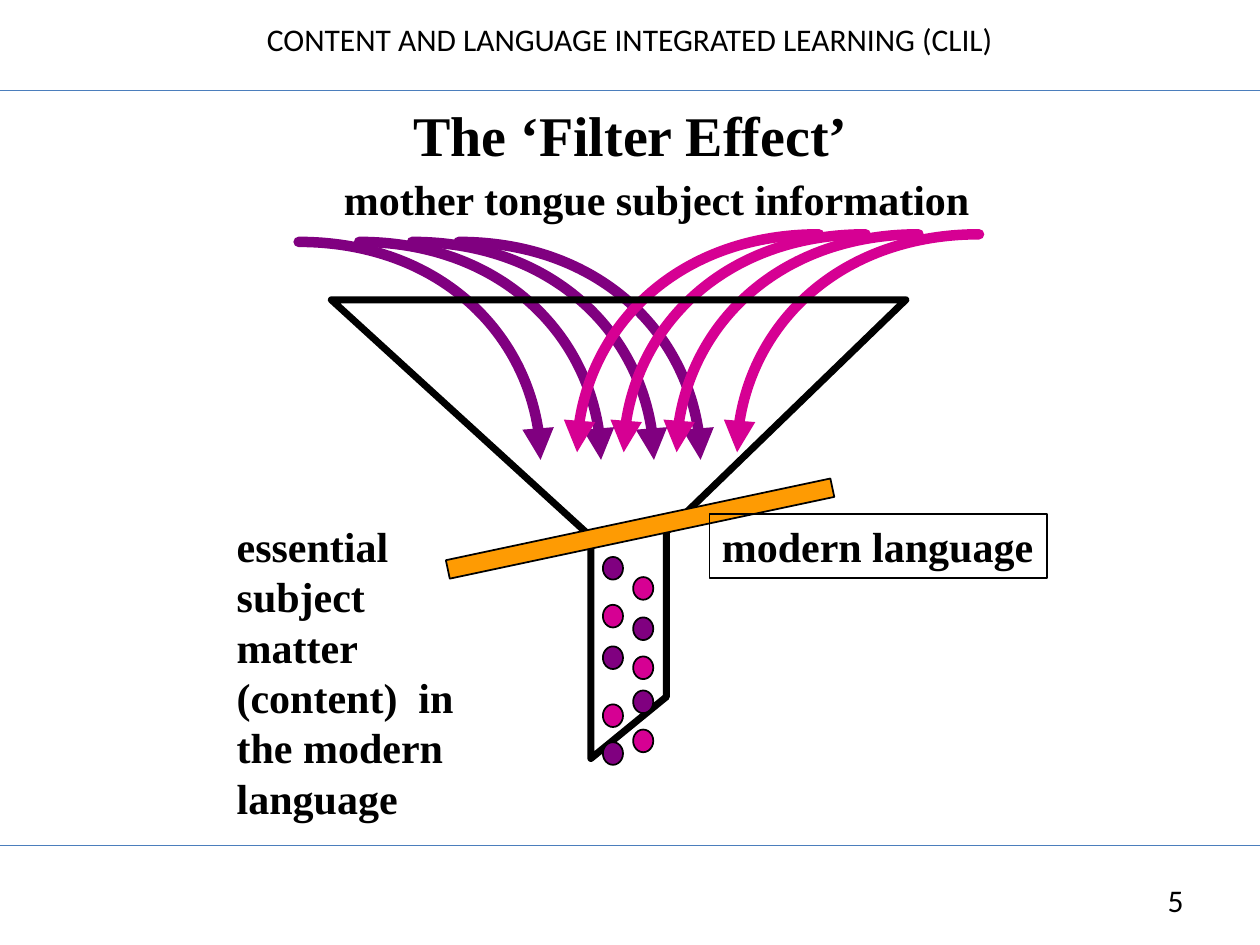
"""Build the 'Filter Effect' slide: information poured through a funnel into a modern language."""
from dataclasses import dataclass
from itertools import cycle

from lxml import etree
from pptx import Presentation
from pptx import util as u
from pptx.dml.color import RGBColor
from pptx.enum import shapes, text
from pptx.oxml.ns import qn

COLS, ROWS = 100, 75
WIDTH, HEIGHT = u.Inches(10), u.Inches(7.5)


@dataclass(frozen=True)
class Theme:
    ink: str = "000000"
    purple: str = "800080"
    pink: str = "D60093"
    bar: str = "FE9B03"
    rule: str = "4B7EBC"
    sans: str = "Calibri"
    serif: str = "Times New Roman"
    small: int = 18
    body: int = 24
    title: int = 32
    hairline: float = 0.75
    outline: float = 1
    funnel: float = 4
    arrow: float = 6


@dataclass(frozen=True)
class Box:
    col: float
    row: float
    cols: float
    rows: float

    def emu(self) -> tuple:
        return x(self.col), y(self.row), x(self.cols), y(self.rows)


@dataclass(frozen=True)
class Label:
    box: Box
    lines: tuple
    size: int
    font: str
    bold: bool = True
    centred: bool = False
    middle: bool = False
    wrap: bool = False
    framed: bool = False


@dataclass(frozen=True)
class Stream:
    colour: str
    start: float
    top: float
    direction: int


@dataclass(frozen=True)
class DotColumn:
    col: float
    rows: tuple
    colours: tuple


T = Theme()
ARC_COLS, ARC_ROWS, BEND = 19.2, 17.3, 0.55
ARC_OFFSETS = (0, 9, 4.8, 12.7)
DOT_COLS, DOT_ROWS = 1.6, 1.8
RULES = (7.2, 67.1)
STREAMS = (Stream(T.purple, 23.7, 19.2, 1), Stream(T.pink, 77.7, 18.6, -1))
FUNNEL = ((26.3, 23.8), (71.9, 23.8), (52.9, 42.2), (52.9, 55.3), (46.9, 60.2), (46.9, 42.6))
FILTER = Box(35.2, 41.2, 31.2, 1.5)
DOTS = (
    DotColumn(47.85, (44.2, 48, 51.3, 55.9, 58.9), (T.purple, T.pink)),
    DotColumn(50.25, (45.8, 49, 52.1, 54.8, 57.9), (T.pink, T.purple)),
)
HEADINGS = (
    Label(Box(16.1, 1.1, 67.8, 4), ("CONTENT AND LANGUAGE INTEGRATED LEARNING (CLIL)",),
          T.small, T.sans, bold=False, centred=True, wrap=True),
    Label(Box(86.9, 69.4, 12.8, 4), ("5",), T.small, T.sans, bold=False, centred=True, wrap=True),
    Label(Box(10.8, 4.4, 78.5, 12.5), ("The ‘Filter Effect’",),
          T.title, T.serif, centred=True, middle=True, wrap=True),
)
CAPTIONS = (
    Label(Box(26.3, 13.3, 52.2, 5), ("mother tongue subject information",), T.body, T.serif),
    Label(Box(56.3, 40.8, 26.8, 5.1), ("modern language",), T.body, T.serif, framed=True),
    Label(Box(17.8, 40.8, 20.2, 25.2),
          ("essential", "subject", "matter", "(content)  in", "the modern", "language"),
          T.body, T.serif),
)


def x(cols: float) -> int:
    """Turn grid columns into a length."""
    return round(WIDTH * cols / COLS)


def y(rows: float) -> int:
    """Turn grid rows into a length."""
    return round(HEIGHT * rows / ROWS)


def set_line(line, colour: str, width: float) -> None:
    """Colour and size a line."""
    line.color.rgb = RGBColor.from_string(colour)
    line.width = u.Pt(width)


def add_rule(s, row: float) -> None:
    """Draw a thin rule across the slide."""
    cxn = s.shapes.add_connector(shapes.MSO_CONNECTOR.STRAIGHT, 0, y(row), WIDTH, y(row))
    set_line(cxn.line, T.rule, T.hairline)
    etree.SubElement(cxn._element.spPr, qn("a:effectLst"))


def add_label(s, label: Label) -> None:
    """Write one text box."""
    sp = s.shapes.add_textbox(*label.box.emu())
    tf = sp.text_frame
    tf.word_wrap = label.wrap
    tf.auto_size = (text.MSO_AUTO_SIZE.NONE if label.middle
                    else text.MSO_AUTO_SIZE.SHAPE_TO_FIT_TEXT)
    tf.vertical_anchor = text.MSO_ANCHOR.MIDDLE if label.middle else text.MSO_ANCHOR.TOP
    tf.text = "\n".join(label.lines)
    for p in tf.paragraphs:
        p.alignment = text.PP_ALIGN.CENTER if label.centred else text.PP_ALIGN.LEFT
        p.font.name, p.font.size, p.font.bold = label.font, u.Pt(label.size), label.bold
        p.font.color.rgb = RGBColor.from_string(T.ink)
    if label.framed:
        set_line(sp.line, T.ink, T.outline)


def add_outline(s, points, colour: str, width: float, close: bool):
    """Draw an unfilled freeform with rounded joins and ends."""
    (col, row), *rest = points
    builder = s.shapes.build_freeform(x(col), y(row))
    builder.add_line_segments([(x(c), y(r)) for c, r in rest], close=close)
    sp = builder.convert_to_shape()
    sp.shadow.inherit = False
    sp.fill.background()
    set_line(sp.line, colour, width)
    ln = sp._element.spPr.find(qn("a:ln"))
    ln.set("cap", "rnd")
    etree.SubElement(ln, qn("a:round"))
    return sp


def add_arc(s, stream: Stream, offset: float) -> None:
    """Draw a quarter-ellipse arrow falling into the funnel."""
    d = stream.direction
    col, row = stream.start + d * offset, stream.top
    end_col, end_row = col + d * ARC_COLS, row + ARC_ROWS
    points = ((col, row), (col + d * ARC_COLS * BEND, row),
              (end_col, end_row - ARC_ROWS * BEND), (end_col, end_row))
    sp = add_outline(s, points, stream.colour, T.arrow, close=False)
    segments = sp._element.xpath(".//a:lnTo")
    outline = segments[0].getparent()
    curve = etree.SubElement(outline, qn("a:cubicBezTo"))
    for segment in segments:
        curve.append(segment[0])
        outline.remove(segment)
    etree.SubElement(sp._element.spPr.find(qn("a:ln")), qn("a:tailEnd"), type="triangle")


def add_solid(s, kind, box: Box, fill: str, rotation: float = 0) -> None:
    """Draw a filled preset shape with a thin outline."""
    sp = s.shapes.add_shape(kind, *box.emu())
    sp.shadow.inherit = False
    sp.fill.solid()
    sp.fill.fore_color.rgb = RGBColor.from_string(fill)
    set_line(sp.line, T.ink, T.outline)
    sp.rotation = rotation


def main() -> None:
    """Assemble and save the slide."""
    prs = Presentation()
    prs.slide_width, prs.slide_height = WIDTH, HEIGHT
    s = prs.slides.add_slide(prs.slide_layouts[6])
    for row in RULES:
        add_rule(s, row)
    for label in HEADINGS:
        add_label(s, label)
    for stream in STREAMS:
        for offset in ARC_OFFSETS:
            add_arc(s, stream, offset)
    add_outline(s, FUNNEL, T.ink, T.funnel, close=True)
    add_solid(s, shapes.MSO_SHAPE.RECTANGLE, FILTER, T.bar, rotation=348)
    for column in DOTS:
        for row, colour in zip(column.rows, cycle(column.colours)):
            add_solid(s, shapes.MSO_SHAPE.OVAL, Box(column.col, row, DOT_COLS, DOT_ROWS), colour)
    for label in CAPTIONS:
        add_label(s, label)
    prs.save("out.pptx")


if __name__ == "__main__":
    main()
